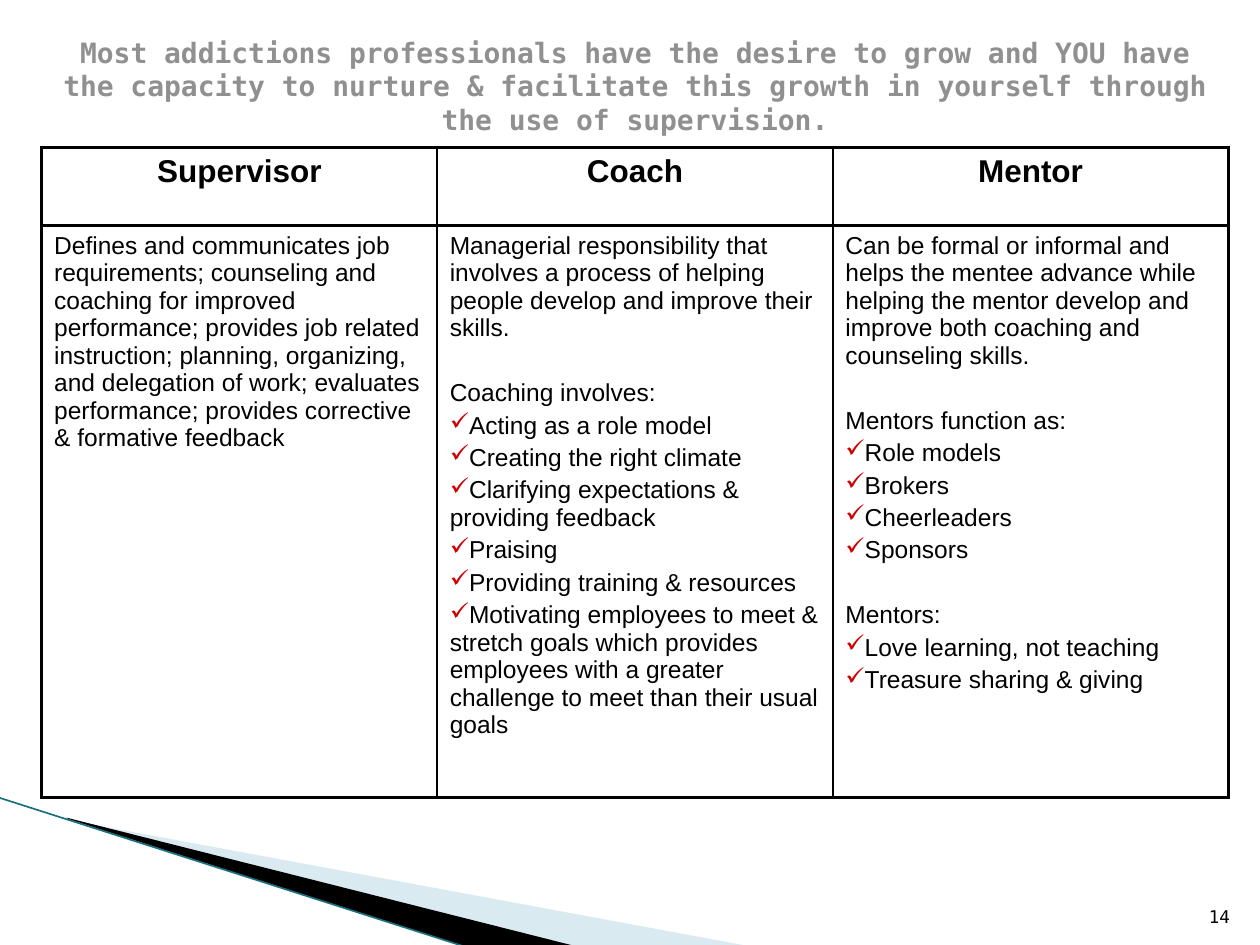
from lxml.etree import SubElement
from pptx import Presentation
from pptx.dml.color import RGBColor
from pptx.enum.shapes import MSO_CONNECTOR
from pptx.enum.text import MSO_ANCHOR, MSO_AUTO_SIZE, PP_ALIGN
from pptx.oxml.ns import qn
from pptx.util import Inches, Pt

BLACK = RGBColor(0x00, 0x00, 0x00)
GRAY = RGBColor(0x90, 0x90, 0x90)
RED = RGBColor(0xD0, 0x00, 0x00)
PALE_BLUE = RGBColor(0xA0, 0xCB, 0xDC)
TEAL = RGBColor(0x1B, 0x70, 0x80)
SANS, MONO = "Arial", "DejaVu Sans Mono"
COLS, ROWS = 100, 75  # layout grid over the slide
THICK, THIN = 2.25, 1
BODY = 14
GAP = 0.2 * BODY  # space between paragraphs
SECTION_GAP = 21.4  # space before a new section in a cell

TITLE = ("Most addictions professionals have the desire to grow and YOU have the "
         "capacity to nurture & facilitate this growth in yourself through the use "
         "of supervision.")

# Each role has sections: a lead paragraph and its checked items
ROLES = {
    "Supervisor": [
        ("Defines and communicates job requirements; counseling and coaching for "
         "improved performance; provides job related instruction; planning, "
         "organizing, and delegation of work; evaluates performance; provides "
         "corrective & formative feedback", []),
    ],
    "Coach": [
        ("Managerial responsibility that involves a process of helping people "
         "develop and improve their skills.", []),
        ("Coaching involves:", [
            "Acting as a role model",
            "Creating the right climate",
            "Clarifying expectations & providing feedback",
            "Praising",
            "Providing training & resources",
            "Motivating employees to meet & stretch goals which provides employees "
            "with a greater challenge to meet than their usual goals",
        ]),
    ],
    "Mentor": [
        ("Can be formal or informal and helps the mentee advance while helping the "
         "mentor develop and improve both coaching and counseling skills.", []),
        ("Mentors function as:",
         ["Role models", "Brokers", "Cheerleaders", "Sponsors"]),
        ("Mentors:", ["Love learning, not teaching", "Treasure sharing & giving"]),
    ],
}


def add_text(tf, text, size=BODY, font=SANS, color=BLACK, bold=False,
             align=PP_ALIGN.LEFT, before=0, check=False, first=False):
    p = tf.paragraphs[0] if first else tf.add_paragraph()
    p.alignment = align
    p.space_before = Pt(before)
    if check:
        pPr = p._p.get_or_add_pPr()
        pPr.set("marL", "0")
        pPr.set("indent", "0")
        bu_color = SubElement(pPr, qn("a:buClr"))
        SubElement(bu_color, qn("a:srgbClr"), val=str(RED))
        SubElement(pPr, qn("a:buChar"), char="✓")
    r = p.add_run()
    r.text = text
    r.font.size, r.font.name, r.font.bold = Pt(size), font, bold
    r.font.color.rgb = color


class Deck:
    def __init__(self):
        self.prs = Presentation()
        self.prs.slide_width, self.prs.slide_height = Inches(10), Inches(7.5)
        self.s = self.prs.slides.add_slide(self.prs.slide_layouts[5])

    def x(self, col):
        return round(self.prs.slide_width * col / COLS)

    def y(self, row):
        return round(self.prs.slide_height * row / ROWS)

    def box(self, col, row, cols, rows):
        return self.x(col), self.y(row), self.x(cols), self.y(rows)

    def title(self, text, *area):
        sp = self.s.shapes.title
        sp.left, sp.top, sp.width, sp.height = self.box(*area)
        tf = sp.text_frame
        tf.vertical_anchor = MSO_ANCHOR.TOP
        tf.auto_size = MSO_AUTO_SIZE.SHAPE_TO_FIT_TEXT
        add_text(tf, text, size=16, font=MONO, color=GRAY, bold=True,
                 align=PP_ALIGN.CENTER, first=True)

    def label(self, text, *area):
        tf = self.s.shapes.add_textbox(*self.box(*area)).text_frame
        tf.word_wrap = True
        tf.vertical_anchor = MSO_ANCHOR.BOTTOM
        add_text(tf, text, size=10, font=MONO, align=PP_ALIGN.RIGHT, first=True)

    def wedge(self, points, color, opacity=100):
        (x0, y0), *rest = [(self.x(c), self.y(r)) for c, r in points]
        builder = self.s.shapes.build_freeform(x0, y0)
        builder.add_line_segments(rest, close=True)
        sp = builder.convert_to_shape()
        sp.shadow.inherit = False
        sp.line.fill.background()
        sp.fill.solid()
        sp.fill.fore_color.rgb = color
        if opacity < 100:
            clr = sp.fill._xPr.find(".//" + qn("a:srgbClr"))
            SubElement(clr, qn("a:alpha"), val=str(opacity * 1000))

    def line(self, start, end, color, width):
        cn = self.s.shapes.add_connector(
            MSO_CONNECTOR.STRAIGHT, self.x(start[0]), self.y(start[1]),
            self.x(end[0]), self.y(end[1]))
        cn.line.color.rgb = color
        cn.line.width = Pt(width)
        SubElement(cn._element.spPr, qn("a:effectLst"))

    def borders(self, cell, **widths):
        tcPr = cell._tc.get_or_add_tcPr()
        for side, width in widths.items():
            ln = SubElement(tcPr, qn("a:ln" + side), w=str(Pt(width)))
            fill = SubElement(ln, qn("a:solidFill"))
            SubElement(fill, qn("a:srgbClr"), val=str(BLACK))
        cell.fill.background()

    def role_table(self, roles, col, row, cols, heights):
        table = self.s.shapes.add_table(
            2, len(roles), *self.box(col, row, cols, sum(heights))).table
        table.first_row = table.horz_banding = False
        for tr, height in zip(table.rows, heights):
            tr.height = self.y(height)
        last = len(roles) - 1
        for i, (role, sections) in enumerate(roles.items()):
            table.columns[i].width = self.x(cols / len(roles))
            head, body = table.cell(0, i), table.cell(1, i)
            for cell in (head, body):
                self.borders(cell, L=THIN if i else THICK,
                             R=THIN if i < last else THICK, T=THICK, B=THICK)
            add_text(head.text_frame, role, size=18, bold=True,
                     align=PP_ALIGN.CENTER, first=True)
            for n, (lead, items) in enumerate(sections):
                add_text(body.text_frame, lead, first=n == 0,
                         before=SECTION_GAP if n else 0)
                for item in items:
                    add_text(body.text_frame, item, before=GAP, check=True)


def main():
    deck = Deck()
    # Corner decoration
    deck.wedge([(5.5, 65.1), (59.5, 75.1), (45.6, 75.1), (5.5, 65)], PALE_BLUE, 40)
    deck.wedge([(5.3, 64.9), (45.7, 75.1), (37.2, 75.2), (5.4, 65)], BLACK)
    deck.line((-0.1, 63.3), (37.1, 75.2), TEAL, 0.95)
    # Comparison of roles
    deck.role_table(ROLES, 3.3, 11.7, 94.2, (6.2, 45.4))
    # Title and page number
    deck.title(TITLE, 3.3, 2.3, 94.2, 6.4)
    deck.label("14", 94.6, 70.1, 4, 4)
    deck.prs.save("out.pptx")


if __name__ == "__main__":
    main()
